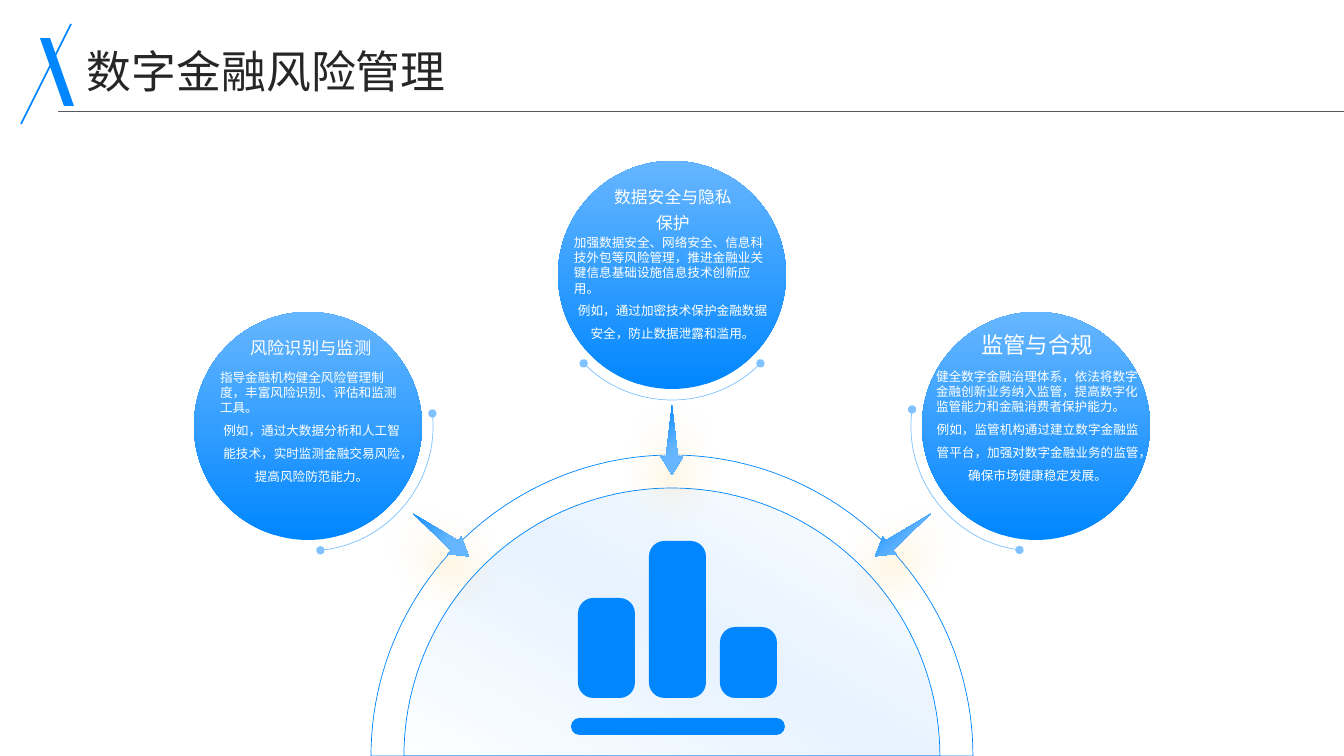
import math

import lxml.etree
import pptx
import pptx.dml.color
import pptx.enum.shapes
import pptx.enum.text
import pptx.oxml
import pptx.oxml.ns
import pptx.util

SHAPE = pptx.enum.shapes.MSO_SHAPE
ALIGN = pptx.enum.text.PP_ALIGN
ANCHOR = pptx.enum.text.MSO_ANCHOR
BLUE, SKY, WHITE, INK, GREY, GLOW = "0086FF", "66B6FF", "FFFFFF", "262626", "595959", "FFB400"
FONT = "Noto Sans CJK SC"


def px(length):
    return round(length * 12192000 / 1344)


def colour(code):
    return pptx.dml.color.RGBColor.from_string(code)


def tag(name):
    return pptx.oxml.ns.qn(name)


def colour_xml(code, alpha=100):
    return f'<a:srgbClr val="{code}"><a:alpha val="{alpha * 1000}"/></a:srgbClr>'


def element(xml):
    space = pptx.oxml.ns.nsdecls("a")
    return pptx.oxml.parse_xml(xml.replace(">", f" {space}>", 1))


class SlideBuilder:
    """Draws styled elements on one page, measured in px."""

    def __init__(self, deck):
        self.page = deck.slides.add_slide(deck.slide_layouts[6])
        self.shapes = self.page.shapes

    def paint(self, shape, fill=None, line=None, width=0.5, alpha=100):
        shape.shadow.inherit = False
        if fill:
            shape.fill.solid()
            shape.fill.fore_color.rgb = colour(fill)
        else:
            shape.fill.background()
        if line:
            shape.line.color.rgb = colour(line)
            shape.line.width = pptx.util.Pt(width)
            solid = shape.line._get_or_add_ln().find(tag("a:solidFill"))
            solid.getparent().replace(solid, element(f"<a:solidFill>{colour_xml(line, alpha)}</a:solidFill>"))
        else:
            shape.line.fill.background()
        return shape

    def gradient(self, shape, stops, direction):
        parts = "".join(f'<a:gs pos="{at * 1000}">{colour_xml(code, alpha)}</a:gs>'
                        for at, code, alpha in stops)
        properties = shape._element.spPr
        properties.replace(properties.find(tag("a:noFill")),
                           element(f'<a:gradFill rotWithShape="1"><a:gsLst>{parts}</a:gsLst>{direction}</a:gradFill>'))

    def preset(self, kind, left, top, width, height, **style):
        shape = self.shapes.add_shape(kind, px(left), px(top), px(width), px(height))
        return self.paint(shape, **style)

    def outline(self, points, **style):
        scale = 12192000 / 1344 / 100
        points = [(round(x * 100), round(y * 100)) for x, y in points]
        builder = self.shapes.build_freeform(*points[0], scale=scale)
        builder.add_line_segments(points[1:], close=True)
        return self.paint(builder.convert_to_shape(), **style)

    def dome(self, radius):
        angles = [math.pi * (1 + step / 90) for step in range(91)]
        return self.outline([(672 + radius * math.cos(a), 756 + radius * math.sin(a)) for a in angles],
                            line=BLUE)

    def orbit(self, x, y, turn):
        arc = self.preset(SHAPE.ARC, x - 125, y - 125, 250, 250, line=BLUE, alpha=50)
        arc.rotation = turn
        for end in ("headEnd", "tailEnd"):
            arc.line._get_or_add_ln().append(element(f'<a:{end} type="oval"></a:{end}>'))

    def disc(self, x, y):
        ball = self.preset(SHAPE.OVAL, x - 114, y - 114, 228, 228)
        self.gradient(ball, [(0, BLUE, 100), (100, SKY, 100)], '<a:lin ang="16200000" scaled="0"/>')

    def arrow(self, x, y, turn):
        offsets = [(-11, 17), (0, 35), (11, 17), (6, 17), (0, -35), (-6, 17)]
        dart = self.outline([(x + dx, y + dy) for dx, dy in offsets])
        dart.rotation = turn
        self.gradient(dart, [(39, SKY, 100), (100, BLUE, 100)],
                      '<a:path path="circle"><a:fillToRect l="100000" t="100000"/></a:path>')
        dart._element.spPr.find(tag("a:effectLst")).append(element(
            '<a:outerShdw blurRad="381000" dist="203200" dir="5400000" algn="t" rotWithShape="0">'
            f'{colour_xml(GLOW, 50)}</a:outerShdw>'))

    def rule(self, start, end, code, width):
        line = self.shapes.add_connector(pptx.enum.shapes.MSO_CONNECTOR.STRAIGHT,
                                         *map(px, start), *map(px, end))
        line.line.color.rgb = colour(code)
        line.line.width = pptx.util.Pt(width)
        lxml.etree.SubElement(line._element.spPr, tag("a:effectLst"))

    def text(self, area, paragraphs, size, code=WHITE, anchor=ANCHOR.TOP):
        box = self.shapes.add_textbox(*map(px, area))
        frame = box.text_frame
        frame.word_wrap = True
        frame.vertical_anchor = anchor
        frame.margin_left = frame.margin_right = frame.margin_top = frame.margin_bottom = 0
        for index, (words, align, spacing) in enumerate(paragraphs):
            para = frame.paragraphs[0] if index == 0 else frame.add_paragraph()
            para.alignment = align
            para.line_spacing = spacing
            if align == ALIGN.LEFT:
                para._p.get_or_add_pPr().set("hangingPunct", "0")
            span = para.add_run()
            span.text = words
            span.font.size = pptx.util.Pt(size)
            span.font.color.rgb = colour(code)
            span.font.name = FONT
            span.font._element.append(element(f'<a:ea typeface="{FONT}"></a:ea>'))


TOPICS = [
    dict(centre=(672, 275), orbit=135, arrow=(672, 440, 0), title="数据安全与隐私保护", size=12,
         heading=(612, 197, 122, 36), body=(574, 235, 197, 142),
         measure="加强数据安全、网络安全、信息科技外包等风险管理，推进金融业关键信息基础设施信息技术创新应用。",
         example="例如，通过加密技术保护金融数据安全，防止数据泄露和滥用。"),
    dict(centre=(308, 426), orbit=84.3, arrow=(441, 535, 307.4), title="风险识别与监测", size=12.3,
         heading=(250, 322, 122, 36), body=(220, 370, 183, 156),
         measure="指导金融机构健全风险管理制度，丰富风险识别、评估和监测工具。",
         example="例如，通过大数据分析和人工智能技术，实时监测金融交易风险，提高风险防范能力。"),
    dict(centre=(1036, 426), orbit=187.6, arrow=(903, 535, 52.6), title="监管与合规", size=16,
         heading=(976, 322, 122, 36), body=(936, 369, 203, 165),
         measure="健全数字金融治理体系，依法将数字金融创新业务纳入监管，提高数字化监管能力和金融消费者保护能力。",
         example="例如，监管机构通过建立数字金融监管平台，加强对数字金融业务的监管，确保市场健康稳定发展。"),
]
BARS = [(578, 598, 57, 100, 0.27), (649, 541, 57, 157, 0.27), (720, 627, 57, 71, 0.27),
        (571, 718, 214, 17, 0.5)]


def main():
    deck = pptx.Presentation()
    deck.slide_width, deck.slide_height = px(1344), px(756)
    slide = SlideBuilder(deck)

    slide.dome(301)
    slide.gradient(slide.dome(268), [(0, BLUE, 0), (50, BLUE, 9), (100, BLUE, 0)],
                   '<a:lin ang="7200000" scaled="0"/>')
    for topic in TOPICS:
        slide.orbit(*topic["centre"], topic["orbit"])
    for topic in TOPICS:
        slide.disc(*topic["centre"])
    for topic in TOPICS:
        slide.arrow(*topic["arrow"])
    for *area, rounding in BARS:
        bar = slide.preset(SHAPE.ROUNDED_RECTANGLE, *area, fill=BLUE)
        bar.adjustments[0] = rounding
    for topic in TOPICS:
        slide.text(topic["heading"], [(topic["title"], ALIGN.CENTER, 1.3)],
                   topic["size"], anchor=ANCHOR.BOTTOM)
        slide.text(topic["body"], [(topic["measure"], ALIGN.LEFT, 1.0),
                                   (topic["example"], ALIGN.CENTER, 1.5)], 9)

    slide.text((87, 44, 1183, 47), [("数字金融风险管理", ALIGN.LEFT, 1.1)], 32, INK, ANCHOR.MIDDLE)
    slash = slide.preset(SHAPE.PARALLELOGRAM, 40, 38, 34, 68, fill=BLUE)
    slash.adjustments[0] = 0.705
    slash._element.spPr.find(tag("a:xfrm")).set("flipH", "1")
    slide.rule((71, 24), (21, 124), BLUE, 1.25)
    slide.rule((58, 111), (1344, 111), GREY, 0.5)
    deck.save("out.pptx")


if __name__ == "__main__":
    main()
